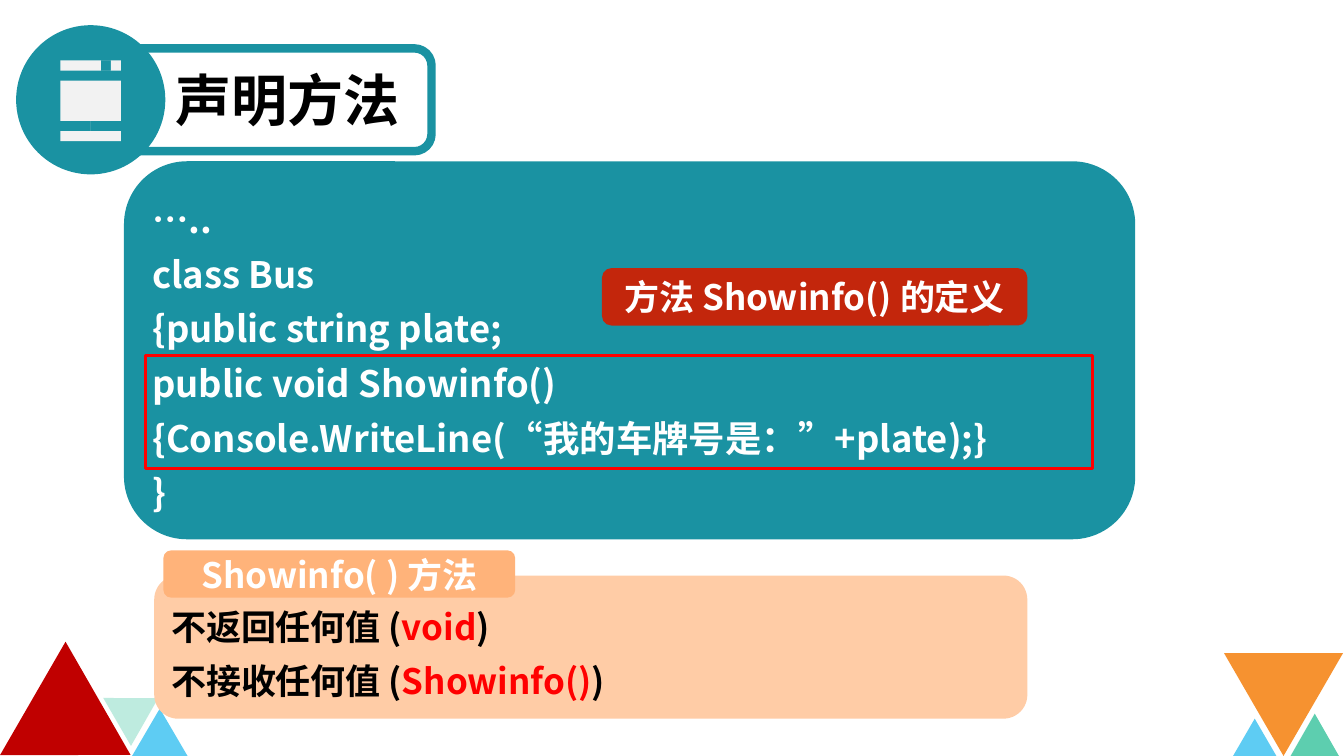
from pptx import Presentation
from pptx import util as u
from pptx.dml.color import RGBColor
from pptx.enum import shapes, text
from pptx.oxml.ns import qn

CELL = u.Inches(0.1)  # the slide is a grid of 133.3 columns by 75 rows
COLUMNS, ROWS = 133.3, 75
THEME = {
    "font": "Noto Sans CJK SC",
    "teal": "1A92A2", "label": "C3260C", "red": "FF0000", "black": "000000",
    "white": "FFFFFF", "icon": "F2F2F2", "panel": "FFCCA6", "tab": "FFB37A",
    "crimson": "C00000", "sky": "5ECCF3", "mint": "BEEBDF", "green": "5DCEAF",
    "orange": "F69230",
    "title_size": 40, "code_size": 26, "body_size": 25,
}
KINDS = shapes.MSO_SHAPE
MIDDLE, TOP = text.MSO_ANCHOR.MIDDLE, text.MSO_ANCHOR.TOP
LEFT, CENTER = text.PP_ALIGN.LEFT, text.PP_ALIGN.CENTER

presentation = Presentation()
presentation.slide_width = round(COLUMNS * CELL)
presentation.slide_height = round(ROWS * CELL)
slide = presentation.slides.add_slide(presentation.slide_layouts[6])


def add_block(kind, place, fill=None, line=None, width=0):
    """Add a preset shape; place is left, top, width, height in grid cells."""
    shape = slide.shapes.add_shape(kind, *(round(cells * CELL) for cells in place))
    shape.shadow.inherit = False
    for target, color in ((shape.fill, fill), (shape.line.fill, line)):
        if color:
            target.solid()
            target.fore_color.rgb = RGBColor.from_string(THEME[color])
        else:
            target.background()
    if line:
        shape.line.width = u.Pt(width)
    return shape


def write(shape, lines, size, color, align=LEFT, spacing=1.0, **frame_format):
    """Fill a shape with lines, each a list of (words, colour or None) runs."""
    frame = shape.text_frame
    for name, value in frame_format.items():
        setattr(frame, name, value)
    for index, runs in enumerate(lines):
        paragraph = frame.add_paragraph() if index else frame.paragraphs[0]
        paragraph.alignment = align
        paragraph.line_spacing = spacing
        for words, run_color in runs:
            run = paragraph.add_run()
            run.text = words
            font = run.font
            for name, value in {"size": u.Pt(THEME[size]), "bold": True,
                                "name": THEME["font"]}.items():
                setattr(font, name, value)
            font.color.rgb = RGBColor.from_string(THEME[run_color or color])
            east_asian = run._r.get_or_add_rPr().makeelement(
                qn("a:ea"), {"typeface": THEME["font"]})
            run._r.rPr.find(qn("a:latin")).addnext(east_asian)


# Corner triangles: place, colour, rotation, upside down
triangles = [
    ((13.1, 70.3, 5.5, 4.7), "sky", 0, False),
    ((10.9, 68.1, 5.5, 4.7), "mint", 60, False),
    ((1.6, 66.5, 13, 11.2), "crimson", 300, True),
    ((128, 70.8, 4.8, 4.2), "green", 0, False),
    ((121.4, 64.8, 11.8, 10.2), "orange", 0, True),
    ((122.3, 71.3, 4.3, 3.7), "sky", 0, False),
]
for place, color, rotation, flipped in triangles:
    triangle = add_block(KINDS.ISOSCELES_TRIANGLE, place, color)
    triangle.rotation = rotation
    if flipped:
        triangle._element.spPr.xfrm.set("flipV", "1")

# Title badge
add_block(KINDS.ROUNDED_RECTANGLE, (12.3, 4.8, 30.5, 10.2), None, "teal", 6)
add_block(KINDS.OVAL, (1.6, 2.5, 14.8, 14.8), "teal")

# Server icon: three units with a slot each, above a network line
outlines = []
for unit in range(3):
    top = 5.7 + 2.22 * unit
    bottom = top + 1.75
    outlines += [
        [(9.6, top), (6, top), (5.8, top + 0.1), (5.7, top + 0.3),
         (5.7, bottom - 0.3), (5.8, bottom - 0.1), (6, bottom), (9.6, bottom)],
        [(10, top), (12, top), (12.2, top + 0.1), (12.3, top + 0.3),
         (12.3, bottom - 0.3), (12.2, bottom - 0.1), (12, bottom), (10, bottom)],
        [(10.5, top + 0.7), (10.5, top + 1.1), (11.3, top + 1.1), (11.3, top + 0.7)],
    ]
outlines += [
    [(10.4, 13.1), (12.3, 13.1), (12.3, 13.7), (10.4, 13.7)],
    [(8.8, 11.9), (9.3, 11.9), (9.3, 12.8), (10, 12.8), (10, 14), (8.1, 14),
     (8.1, 13.7), (5.7, 13.7), (5.7, 13.1), (8.1, 13.1), (8.1, 12.8), (8.8, 12.8)],
]
builder = slide.shapes.build_freeform(*outlines[0][0], scale=CELL)
for index, outline in enumerate(outlines):
    if index:
        builder.move_to(*outline[0])
    builder.add_line_segments(outline[1:], close=True)
icon = builder.convert_to_shape()
icon.shadow.inherit = False
icon.fill.solid()
icon.fill.fore_color.rgb = RGBColor.from_string(THEME["icon"])
icon.line.fill.background()

title = slide.shapes.add_textbox(
    *(round(cells * CELL) for cells in (16.4, 6, 24.2, 7.7)))
write(title, [[("声明方法", None)]], "title_size", "black", word_wrap=False)

# Code panel
code = [
    "…..",
    "class Bus",
    "{public string plate;",
    "public void Showinfo()",
    "{Console.WriteLine(“我的车牌号是：”+plate);}",
    "}",
]
code_panel = add_block(KINDS.ROUNDED_RECTANGLE, (12.3, 16, 100.3, 37.5), "teal")
write(code_panel, [[(line, None)] for line in code], "code_size", "white",
      spacing=1.25, vertical_anchor=MIDDLE, word_wrap=True)

definition = add_block(KINDS.ROUNDED_RECTANGLE, (59.7, 26.6, 42.2, 5.7), "label")
write(definition, [[("方法 Showinfo() 的定义", None)]], "body_size", "white",
      CENTER, vertical_anchor=TOP, word_wrap=False)

# Explanation panel and its tab
facts = [("不返回任何值 (", "void"), ("不接收任何值 (", "Showinfo()")]
explanation = add_block(KINDS.ROUNDED_RECTANGLE, (15.3, 57.1, 86.6, 14.2), "panel")
write(explanation, [[(fact, None), (keyword, "red"), (")", None)] for fact, keyword in facts],
      "body_size", "black", spacing=1.3, vertical_anchor=MIDDLE, word_wrap=True)

tab = add_block(KINDS.ROUNDED_RECTANGLE, (16.2, 54.6, 34.9, 4.7), "tab")
write(tab, [[("Showinfo( ) 方法", None)]], "body_size", "white",
      CENTER, vertical_anchor=MIDDLE, word_wrap=False)

# Frame around the method in the code
add_block(KINDS.RECTANGLE, (14.4, 35.3, 94, 11.2), None, "red", 2)

presentation.save("out.pptx")
